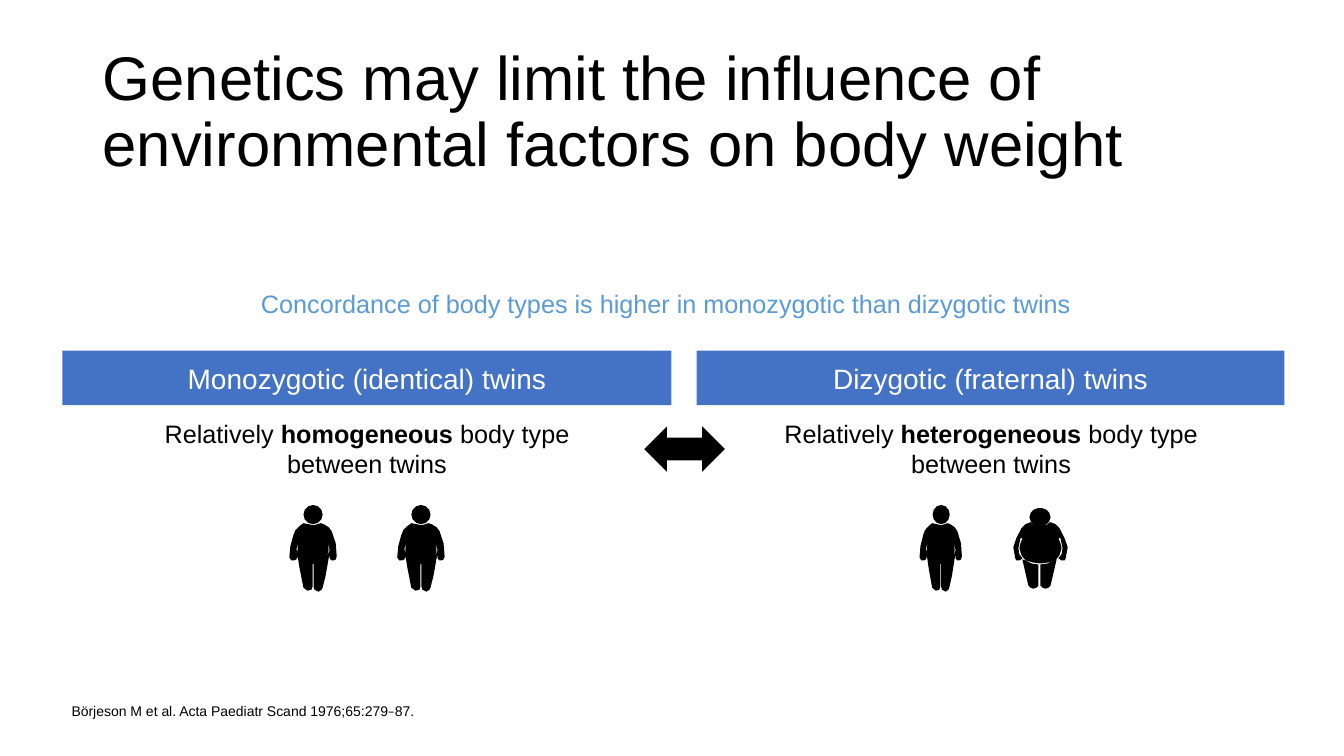
from dataclasses import dataclass

from pptx import Presentation
from pptx.dml.color import RGBColor
from pptx.enum.shapes import MSO_SHAPE
from pptx.enum.text import MSO_ANCHOR, PP_ALIGN
from pptx.shapes.autoshape import Shape
from pptx.shapes.shapetree import GroupShapes, SlideShapes
from pptx.text.text import TextFrame
from pptx.util import Emu, Pt

EMU_PER_PX = 9144
RECTANGLE, OVAL, DOUBLE_ARROW = MSO_SHAPE.RECTANGLE, MSO_SHAPE.OVAL, MSO_SHAPE.LEFT_RIGHT_ARROW
LEFT, CENTER = PP_ALIGN.LEFT, PP_ALIGN.CENTER
TOP, MIDDLE, BOTTOM = MSO_ANCHOR.TOP, MSO_ANCHOR.MIDDLE, MSO_ANCHOR.BOTTOM

Points = list[tuple[int, int]]


@dataclass(frozen=True)
class Theme:
    font: str = "Arial"
    dash_font: str = "Calibri"
    black: RGBColor = RGBColor(0, 0, 0)
    white: RGBColor = RGBColor(255, 255, 255)
    banner: RGBColor = RGBColor(0x44, 0x72, 0xC4)
    accent: RGBColor = RGBColor(0x5B, 0x9B, 0xD5)
    title_size: float = 44
    banner_size: float = 20
    body_size: float = 18
    citation_size: float = 10


THEME = Theme()


@dataclass(frozen=True)
class Box:
    left: int
    top: int
    width: int
    height: int

    def emu(self) -> tuple[Emu, Emu, Emu, Emu]:
        return (px(self.left), px(self.top), px(self.width), px(self.height))


@dataclass(frozen=True)
class Piece:
    text: str
    bold: bool = False
    font: str | None = None


@dataclass(frozen=True)
class Style:
    size: float
    color: RGBColor = THEME.black
    align: PP_ALIGN = LEFT
    anchor: MSO_ANCHOR = TOP
    spacing: float = 1.0
    margin: bool = True


@dataclass(frozen=True)
class TwinType:
    heading: str
    emphasis: str
    banner: Box
    finding: Box


@dataclass(frozen=True)
class Figure:
    body: Box
    head: Box


def px(length: float) -> Emu:
    return Emu(round(length * EMU_PER_PX))


def mirror(points: Points, width: int) -> Points:
    return [(width - x, y) for x, y in reversed(points)]


BODY: list[Points] = [
    [(24, 40), (23, 41), (23, 63), (22, 66), (18, 67), (14, 64), (10, 44), (8, 31),
     (8, 34), (7, 36), (5, 37), (2, 37), (0, 34), (1, 23), (4, 12), (6, 7), (10, 3),
     (14, 0), (19, 1), (24, 2), (28, 1), (31, 0), (34, 1), (39, 4), (42, 8), (44, 14),
     (46, 20), (47, 33), (46, 36), (44, 37), (42, 37), (40, 35), (40, 31), (39, 35),
     (36, 52), (33, 64), (32, 66), (29, 68), (25, 66), (24, 63)],
    [(37, 34), (40, 27), (38, 19), (39, 27)],
    [(10, 33), (8, 27), (9, 19), (7, 26)],
]
TORSO_HALF: Points = [
    (21, 3), (17, 0), (12, 2), (8, 6), (3, 16), (0, 25), (2, 36), (3, 38), (6, 38),
    (9, 36), (6, 32), (5, 26), (6, 21), (7, 16), (9, 16), (7, 21), (6, 26), (8, 33),
    (12, 38), (19, 40), (26, 41)]
TORSO = TORSO_HALF + mirror(TORSO_HALF, 53)
LEG: Points = [(0, 0), (6, 26), (8, 28), (11, 29), (14, 28), (16, 26), (16, 5), (9, 4), (3, 1)]


def fill_text(frame: TextFrame, pieces: list[Piece], style: Style) -> None:
    frame.word_wrap = True
    frame.vertical_anchor = style.anchor
    if not style.margin:
        frame.margin_left = frame.margin_right = frame.margin_top = frame.margin_bottom = 0
    paragraph = frame.paragraphs[0]
    paragraph.alignment = style.align
    paragraph.line_spacing = style.spacing
    paragraph.font.name = THEME.font
    paragraph.font.size = Pt(style.size)
    paragraph.font.color.rgb = style.color
    for piece in pieces:
        if piece.text == "\n":
            paragraph.add_line_break()
            continue
        run = paragraph.add_run()
        run.text = piece.text
        if piece.bold:
            run.font.bold = True
        if piece.font:
            run.font.name = piece.font


def add_text(shapes: SlideShapes, box: Box, pieces: list[Piece], style: Style) -> None:
    fill_text(shapes.add_textbox(*box.emu()).text_frame, pieces, style)


def paint(shape: Shape, color: RGBColor) -> Shape:
    shape.shadow.inherit = False
    shape.fill.solid()
    shape.fill.fore_color.rgb = color
    shape.line.fill.background()
    return shape


def add_solid(shapes: SlideShapes | GroupShapes, kind: MSO_SHAPE, box: Box,
              color: RGBColor = THEME.black) -> Shape:
    return paint(shapes.add_shape(kind, *box.emu()), color)


def add_outline(shapes: GroupShapes, box: Box, contours: list[Points]) -> None:
    width = max(x for x, _ in contours[0])
    height = max(y for _, y in contours[0])
    scale = (box.width * EMU_PER_PX / width, box.height * EMU_PER_PX / height)
    outer, *slits = contours
    builder = shapes.build_freeform(*outer[0], scale=scale)
    builder.add_line_segments(outer[1:], close=True)
    for slit in slits:
        builder.move_to(*slit[0])
        builder.add_line_segments(slit[1:], close=True)
    paint(builder.convert_to_shape(px(box.left), px(box.top)), THEME.black)


def add_figure(shapes: GroupShapes, figure: Figure) -> None:
    add_outline(shapes, figure.body, BODY)
    add_solid(shapes, OVAL, figure.head)


def add_twin_type(shapes: SlideShapes, twins: TwinType) -> None:
    banner = add_solid(shapes, RECTANGLE, twins.banner, THEME.banner)
    fill_text(banner.text_frame, [Piece(twins.heading)],
              Style(THEME.banner_size, THEME.white, CENTER, MIDDLE))
    add_text(shapes, twins.finding,
             [Piece("Relatively "), Piece(twins.emphasis, bold=True), Piece(" body type"),
              Piece("\n"), Piece("between twins")],
             Style(THEME.body_size, align=CENTER))


TWIN_TYPES = [
    TwinType("Monozygotic (identical) twins", "homogeneous",
             Box(62, 348, 604, 54), Box(78, 410, 572, 73)),
    TwinType("Dizygotic (fraternal) twins", "heterogeneous",
             Box(691, 348, 583, 54), Box(703, 410, 560, 73)),
]
IDENTICAL_PAIR = [Figure(Box(left, 519, 47, 68), Box(left + 14, 501, 19, 19)) for left in (287, 394)]
SLIM_TWIN = Figure(Box(912, 519, 42, 68), Box(925, 501, 17, 19))


def main() -> None:
    deck = Presentation()
    deck.slide_width, deck.slide_height = px(1333), px(750)
    shapes = deck.slides.add_slide(deck.slide_layouts[6]).shapes

    add_text(shapes, Box(92, 40, 1150, 145),
             [Piece("Genetics may limit the influence of environmental factors on body weight")],
             Style(THEME.title_size, anchor=MIDDLE, spacing=0.9))
    add_text(shapes, Box(71, 679, 946, 35),
             [Piece("Börjeson M et al. Acta Paediatr Scand 1976;65:279"),
              Piece("–", font=THEME.dash_font), Piece("87.")],
             Style(THEME.citation_size, anchor=BOTTOM, spacing=0.9, margin=False))
    for twins in TWIN_TYPES:
        add_twin_type(shapes, twins)
    add_solid(shapes, DOUBLE_ARROW, Box(639, 423, 80, 45))
    add_text(shapes, Box(249, 281, 836, 40),
             [Piece("Concordance of body types is higher in monozygotic than dizygotic twins")],
             Style(THEME.body_size, THEME.accent))

    identical = shapes.add_group_shape().shapes
    for figure in IDENTICAL_PAIR:
        add_figure(identical, figure)
    fraternal = shapes.add_group_shape().shapes
    add_figure(fraternal, SLIM_TWIN)
    add_outline(fraternal, Box(1005, 518, 54, 41), [TORSO])
    add_outline(fraternal, Box(1014, 555, 16, 29), [LEG])
    add_outline(fraternal, Box(1032, 555, 16, 29), [mirror(LEG, 16)])
    add_solid(fraternal, OVAL, Box(1021, 504, 21, 18))

    deck.save("out.pptx")


if __name__ == "__main__":
    main()
